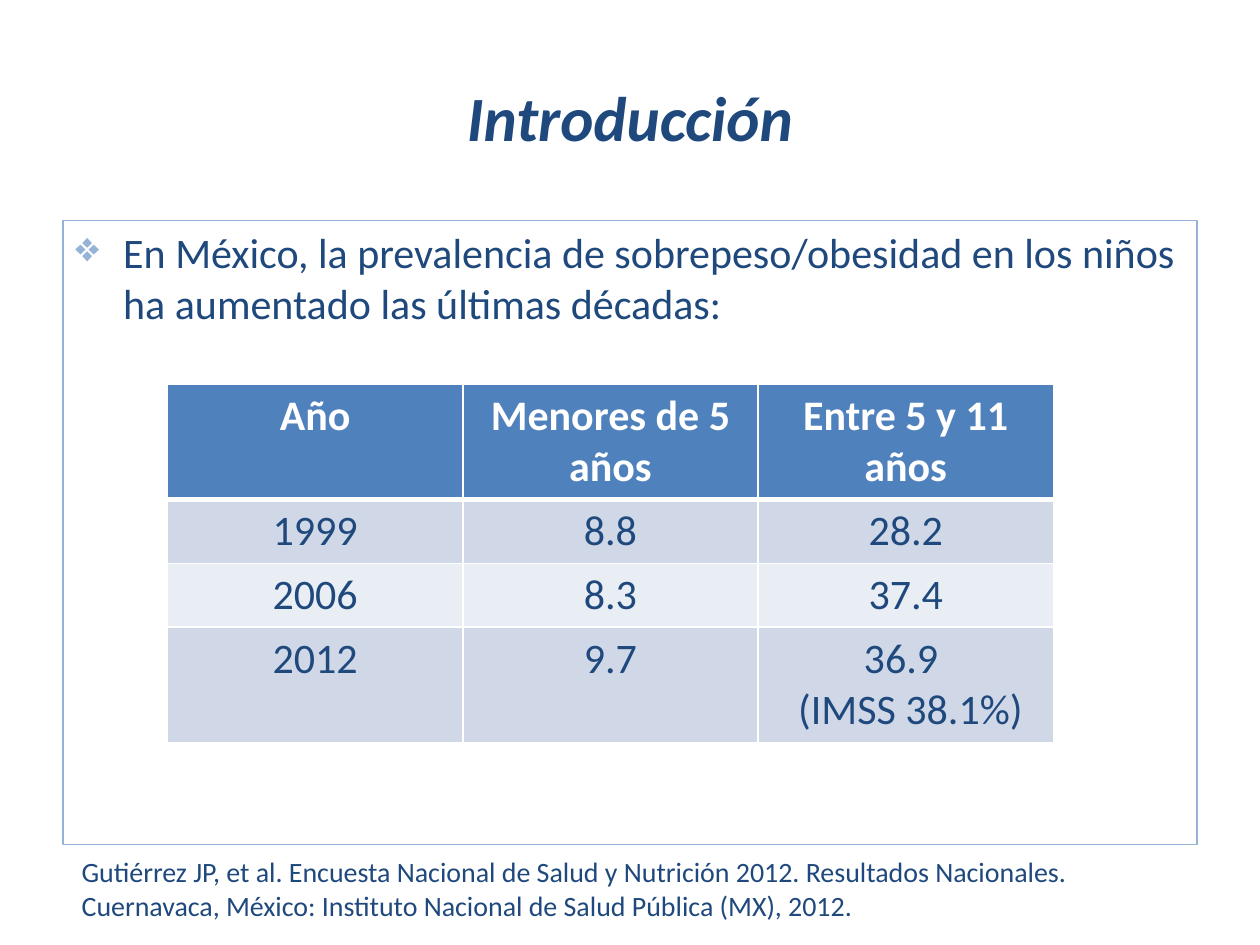
from lxml import etree
from pptx import Presentation
from pptx import util as u
from pptx.dml.color import RGBColor
from pptx.enum import shapes, text
from pptx.oxml import ns

NAVY = RGBColor(0x1F, 0x49, 0x7D)
LIGHT_BLUE = RGBColor(0x95, 0xB3, 0xD7)
HEADER_BLUE = RGBColor(0x4F, 0x81, 0xBD)
BAND_DARK = RGBColor(0xD0, 0xD8, 0xE8)
BAND_LIGHT = RGBColor(0xE9, 0xED, 0xF4)
WHITE = RGBColor(0xFF, 0xFF, 0xFF)


def add_run(paragraph, wording, size, color=NAVY, bold=False, italic=False):
    run = paragraph.add_run()
    run.text = wording
    run.font.name = "Calibri"
    run.font.size = u.Pt(size)
    run.font.color.rgb = color
    run.font.bold = bold
    run.font.italic = italic


def add_border(cell, side, points):
    line = etree.SubElement(cell._tc.get_or_add_tcPr(), ns.qn(f"a:ln{side}"), w=str(u.Pt(points)))
    fill = etree.SubElement(line, ns.qn("a:solidFill"))
    etree.SubElement(fill, ns.qn("a:srgbClr"), val=str(WHITE))


prs = Presentation()
prs.slide_width, prs.slide_height = u.Inches(10), u.Inches(7.5)
slide = prs.slides.add_slide(prs.slide_layouts[5])

title = slide.shapes.title
title.left, title.top = u.Inches(0.5), u.Inches(0.3)
title.width, title.height = u.Inches(9), u.Inches(1.25)
title.text_frame.vertical_anchor = text.MSO_ANCHOR.MIDDLE
heading = title.text_frame.paragraphs[0]
heading.alignment = text.PP_ALIGN.CENTER
add_run(heading, "Introducción", 36, bold=True, italic=True)

statement = slide.shapes.add_shape(
    shapes.MSO_SHAPE.RECTANGLE, u.Inches(0.5), u.Inches(1.75), u.Inches(9), u.Inches(4.95))
statement.shadow.inherit = False
statement.fill.background()
statement.line.color.rgb = LIGHT_BLUE
statement.line.width = u.Pt(0.75)
statement.text_frame.word_wrap = True
statement.text_frame.vertical_anchor = text.MSO_ANCHOR.TOP
claim = statement.text_frame.paragraphs[0]
claim.alignment = text.PP_ALIGN.LEFT
claim.space_before = u.Pt(4.8)
claim_format = claim._p.get_or_add_pPr()
claim_format.set("marL", str(u.Inches(0.38)))
claim_format.set("indent", str(-u.Inches(0.38)))
bullet_color = etree.SubElement(claim_format, ns.qn("a:buClr"))
etree.SubElement(bullet_color, ns.qn("a:srgbClr"), val=str(LIGHT_BLUE))
etree.SubElement(claim_format, ns.qn("a:buChar"), char="❖")
add_run(claim, "En México, la prevalencia de sobrepeso/obesidad en los niños "
               "ha aumentado las últimas décadas:", 24)

prevalence = [
    ["Año", "Menores de 5 años", "Entre 5 y 11 años"],
    ["1999", "8.8", "28.2"],
    ["2006", "8.3", "37.4"],
    ["2012", "9.7", "36.9 \n (IMSS 38.1%)"],
]
row_fills = [HEADER_BLUE, BAND_DARK, BAND_LIGHT, BAND_DARK]
table = slide.shapes.add_table(
    4, 3, u.Inches(1.33), u.Inches(3.05), u.Inches(7.03), u.Inches(1.64)).table
for row, values in enumerate(prevalence):
    table.rows[row].height = u.Inches(0.41)
    is_header = row == 0
    for column, value in enumerate(values):
        cell = table.cell(row, column)
        for side in "LRTB":
            under_header = (row, side) in [(0, "B"), (1, "T")]
            add_border(cell, side, 3 if under_header else 1)
        cell.fill.solid()
        cell.fill.fore_color.rgb = row_fills[row]
        for index, wording in enumerate(value.split("\n")):
            frame = cell.text_frame
            entry = frame.add_paragraph() if index else frame.paragraphs[0]
            entry.alignment = text.PP_ALIGN.CENTER
            add_run(entry, wording, 24, WHITE if is_header else NAVY, bold=is_header)

citation = slide.shapes.add_textbox(
    u.Inches(0.55), u.Inches(6.73), u.Inches(9.06), u.Inches(0.64)).text_frame
citation.word_wrap = True
citation.auto_size = text.MSO_AUTO_SIZE.SHAPE_TO_FIT_TEXT
citation.vertical_anchor = text.MSO_ANCHOR.MIDDLE
add_run(citation.paragraphs[0],
        "Gutiérrez JP, et al. Encuesta Nacional de Salud y Nutrición 2012. Resultados Nacionales. "
        "Cuernavaca, México: Instituto Nacional de Salud Pública (MX), 2012.", 16)

prs.save("out.pptx")
